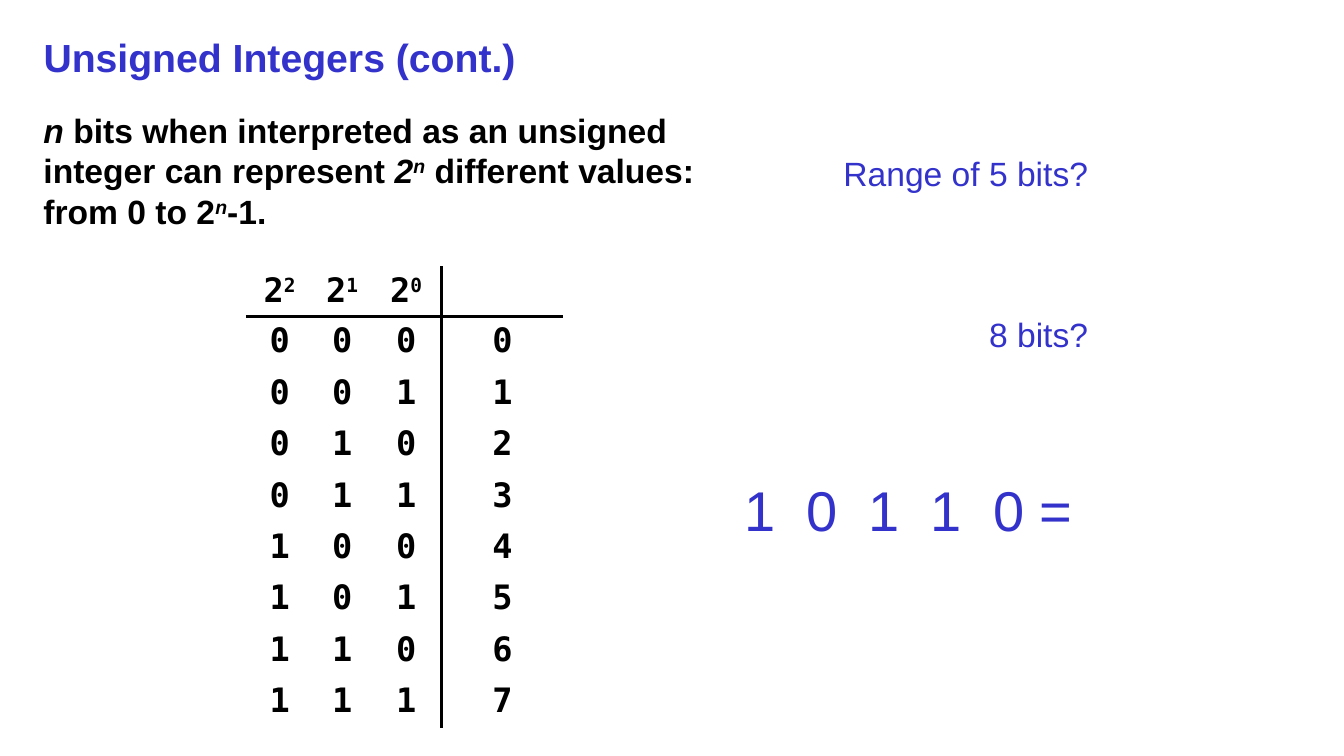
from dataclasses import dataclass

from lxml import etree
from pptx import Presentation
from pptx.dml.color import RGBColor
from pptx.enum.text import MSO_ANCHOR, PP_ALIGN
from pptx.oxml.ns import qn
from pptx.util import Inches, Pt

LEFT, RIGHT, CENTER = PP_ALIGN.LEFT, PP_ALIGN.RIGHT, PP_ALIGN.CENTER
TOP, MIDDLE = MSO_ANCHOR.TOP, MSO_ANCHOR.MIDDLE
BLUE = RGBColor(0x33, 0x33, 0xCC)
BLACK = RGBColor(0x00, 0x00, 0x00)
WIDTH, HEIGHT = Inches(13.33), Inches(7.5)
BITS = 3
COLUMN_WIDTHS = (0.67, 0.57, 0.7, 1.21)
HEADER_HEIGHT, ROW_HEIGHT = 0.49, 0.51
RULE_WIDTH = Pt(2.25)
QUESTION_GAP = Pt(86.4)
LINE_SPACING = 1.0

TITLE = dict(name="Arial", size=Pt(28), bold=True, color=BLUE)
BODY = dict(name="Arial", size=Pt(24), bold=True, color=BLACK)
MONO = dict(BODY, name="DejaVu Sans Mono")
QUESTION = dict(name="Arial", size=Pt(24), color=BLUE)
NUMBER = dict(QUESTION, size=Pt(40))


@dataclass(frozen=True)
class Span:
    """A run of text with its format."""
    text: str
    format: dict
    raised: bool = False
    tracking: int = 0


@dataclass(frozen=True)
class Line:
    """A paragraph; a newline span is a line break."""
    spans: tuple
    align: int = LEFT
    before: int = 0


@dataclass(frozen=True)
class Block:
    """A text box placed by shares of the slide's size."""
    left: float
    top: float
    width: float
    height: float
    lines: tuple
    anchor: int = TOP
    wrap: bool = True


def write_line(para, line: Line) -> None:
    """Fill a paragraph with the spans of a line."""
    para.alignment = line.align
    para.space_before = line.before
    para.line_spacing = LINE_SPACING
    for span in line.spans:
        if span.text == "\n":
            para.add_line_break()
            continue
        run = para.add_run()
        run.text = span.text
        for key, value in span.format.items():
            if key == "color":
                run.font.color.rgb = value
            else:
                setattr(run.font, key, value)
        properties = run._r.get_or_add_rPr()
        if span.raised:
            properties.set("baseline", "30000")
        if span.tracking:
            properties.set("spc", str(span.tracking))


def add_block(page, block: Block) -> None:
    """Add a text box with its lines."""
    box = page.shapes.add_textbox(
        int(WIDTH * block.left), int(HEIGHT * block.top),
        int(WIDTH * block.width), int(HEIGHT * block.height))
    frame = box.text_frame
    frame.word_wrap = block.wrap
    frame.vertical_anchor = block.anchor
    for index, line in enumerate(block.lines):
        para = frame.add_paragraph() if index else frame.paragraphs[0]
        write_line(para, line)


def set_borders(cell, ruled: set) -> None:
    """Draw black rules on the named sides and clear the others."""
    properties = cell._tc.get_or_add_tcPr()
    for index, side in enumerate(("lnL", "lnR", "lnT", "lnB")):
        edge = etree.Element(qn(f"a:{side}"), w=str(RULE_WIDTH))
        if side in ruled:
            fill = etree.SubElement(edge, qn("a:solidFill"))
            etree.SubElement(fill, qn("a:srgbClr"), val=str(BLACK))
        else:
            etree.SubElement(edge, qn("a:noFill"))
        properties.insert(index, edge)


def cell_spans(row: int, column: int) -> tuple:
    """Give the power, bit or value shown in a cell."""
    power = BITS - 1 - column
    if row == 0:
        if column == BITS:
            return ()
        return Span("2", MONO), Span(str(power), MONO, raised=True)
    value = row - 1
    shown = value if column == BITS else value >> power & 1
    return (Span(str(shown), MONO),)


def add_bit_table(page) -> None:
    """Add the table of all values of three bits."""
    rows = 1 + 2 ** BITS
    table = page.shapes.add_table(
        rows, BITS + 1, int(WIDTH * 0.183), int(HEIGHT * 0.352),
        Inches(sum(COLUMN_WIDTHS)),
        Inches(HEADER_HEIGHT + ROW_HEIGHT * (rows - 1))).table
    table.first_row = table.horz_banding = False
    for column, width in zip(table.columns, COLUMN_WIDTHS):
        column.width = Inches(width)
    for row in range(rows):
        table.rows[row].height = Inches(ROW_HEIGHT if row else HEADER_HEIGHT)
        for column in range(BITS + 1):
            cell = table.cell(row, column)
            cell.fill.background()
            rules = {"lnB": row == 0, "lnT": row == 1,
                     "lnR": column == BITS - 1, "lnL": column == BITS}
            set_borders(cell, {side for side, shown in rules.items() if shown})
            spans = cell_spans(row, column)
            if spans:
                write_line(cell.text_frame.paragraphs[0], Line(spans, CENTER))


def binary_spans(digits: str) -> tuple:
    """Space out binary digits and end with an equals sign."""
    spans = []
    for digit in digits[:-1]:
        spans += [Span(digit, NUMBER), Span(" ", NUMBER, tracking=1110)]
    return (*spans, Span(f"{digits[-1]} = ", NUMBER))


ITALIC = dict(BODY, italic=True)
BLOCKS = (
    Block(0.025, 0.036, 0.95, 0.077,
          (Line((Span("Unsigned Integers (cont.)", TITLE),)),), MIDDLE),
    Block(0.025, 0.139, 0.536, 0.723, (Line((
        Span("n ", ITALIC),
        Span("bits when interpreted as an unsigned integer can represent ", BODY),
        Span("2", ITALIC), Span("n", ITALIC, raised=True),
        Span(" different values:", BODY), Span("\n", BODY),
        Span("from 0 to 2", BODY), Span("n", ITALIC, raised=True),
        Span("-1.", BODY))),)),
    Block(0.543, 0.196, 0.274, 0.535, (
        Line((Span("Range of 5 bits?", QUESTION),), RIGHT),
        Line((Span("8 bits?", QUESTION),), RIGHT, QUESTION_GAP),
        Line(binary_spans("10110"), RIGHT, QUESTION_GAP)), wrap=False),
)


def main() -> None:
    """Build and save the slide."""
    deck = Presentation()
    deck.slide_width, deck.slide_height = WIDTH, HEIGHT
    page = deck.slides.add_slide(deck.slide_layouts[6])
    for block in BLOCKS:
        add_block(page, block)
    add_bit_table(page)
    deck.save("out.pptx")


if __name__ == "__main__":
    main()
